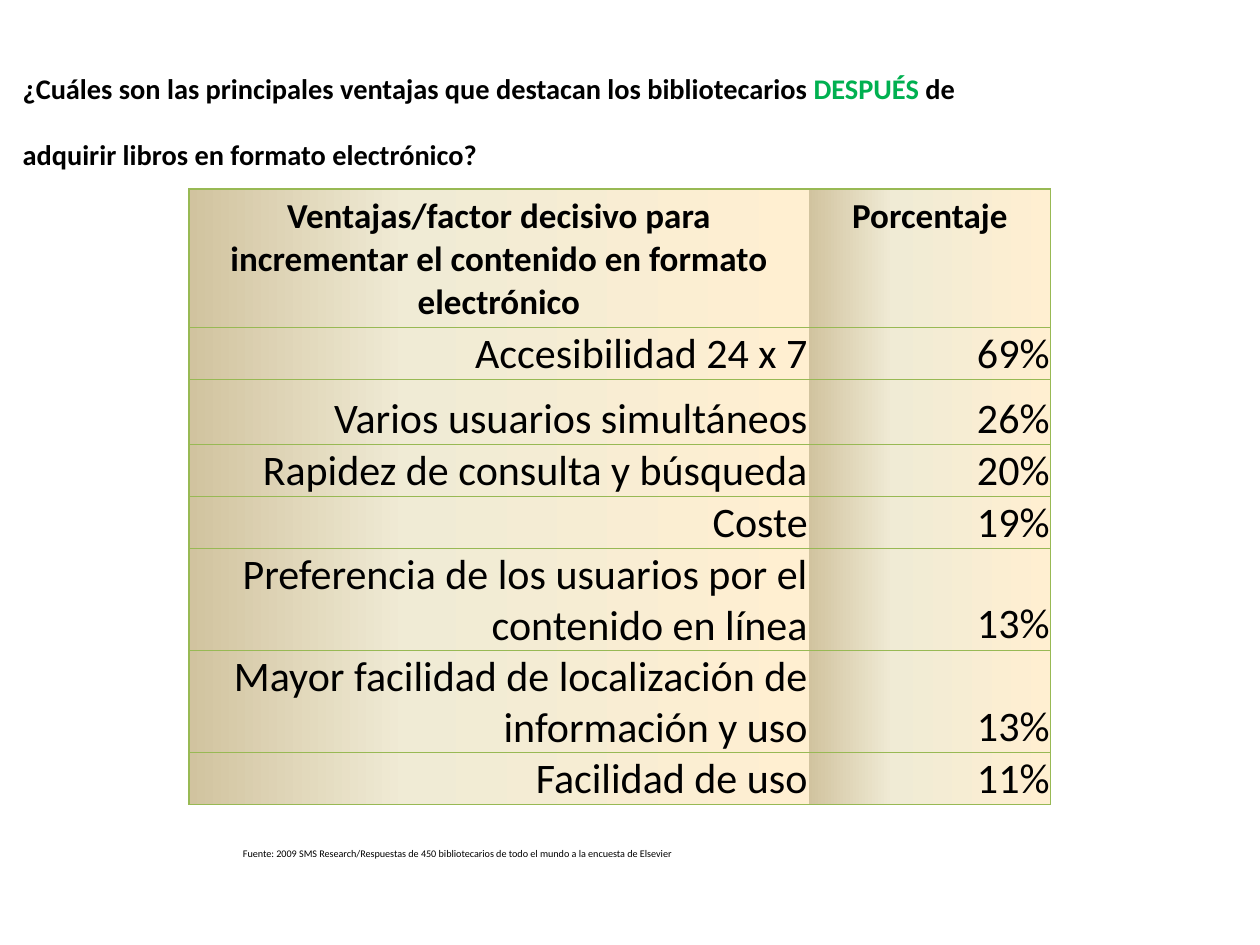
"""Build a slide with a table of the advantages of electronic books named by librarians."""
from pptx import Presentation
from pptx.dml.color import RGBColor
from pptx.enum.text import MSO_ANCHOR, MSO_AUTO_SIZE, PP_ALIGN
from pptx.oxml import parse_xml
from pptx.oxml.ns import nsdecls
from pptx.util import Inches, Pt

COLORS = {"text": "000000", "accent": "00B050", "border": "98B954",
          "light": "FFEFD1", "mid": "F0EBD5", "dark": "D1C39F"}
STOPS = [(0, "light"), (65, "mid"), (100, "dark")]
ROWS = [
    ("Ventajas/factor decisivo para incrementar el contenido en formato electrónico", "Porcentaje", 0.57),
    ("Accesibilidad 24 x 7", "69%", 0.4),
    ("Varios usuarios simultáneos", "26%", 0.52),
    ("Rapidez de consulta y búsqueda", "20%", 0.4),
    ("Coste", "19%", 0.4),
    ("Preferencia de los usuarios por el contenido en línea", "13%", 0.4),
    ("Mayor facilidad de localización de información y uso", "13%", 0.4),
    ("Facilidad de uso", "11%", 0.4),
]
TITLE = [
    ("¿Cuáles son las principales ventajas que destacan los bibliotecarios ", "text"),
    ("DESPUÉS", "accent"),
    (" de adquirir libros en formato electrónico?", "text"),
]


def add_run(p, text, size, color="text", bold=False, baseline=None):
    r = p.add_run()
    r.text = text
    r.font.name = "Calibri"
    r.font.size = Pt(size)
    r.font.bold = bold
    r.font.color.rgb = RGBColor.from_string(COLORS[color])
    if baseline:
        r.font._element.set("baseline", str(baseline))


def style_cell(cell, open_side):
    tc_pr = cell._tc.get_or_add_tcPr()
    for side in "LRTB":
        paint = "<a:noFill/>" if side == open_side else (
            f'<a:solidFill><a:srgbClr val="{COLORS["border"]}"/></a:solidFill>')
        tc_pr.append(parse_xml(f'<a:ln{side} {nsdecls("a")} w="9525">{paint}</a:ln{side}>'))
    stops = "".join(f'<a:gs pos="{pos * 1000}"><a:srgbClr val="{COLORS[name]}"/></a:gs>'
                    for pos, name in STOPS)
    tc_pr.append(parse_xml(f'<a:gradFill {nsdecls("a")}><a:gsLst>{stops}</a:gsLst>'
                           '<a:lin ang="10800000" scaled="0"/></a:gradFill>'))


prs = Presentation()
prs.slide_width, prs.slide_height = Inches(10), Inches(7.5)
slide = prs.slides.add_slide(prs.slide_layouts[5])

s = slide.shapes.add_table(len(ROWS), 2, Inches(1.5), Inches(1.5), Inches(6.83), Inches(4.89))
table = s.table
table.first_row = False
table.horz_banding = False
for col, width in zip(table.columns, (4.92, 1.92)):
    col.width = Inches(width)
for i, (*texts, height) in enumerate(ROWS):
    table.rows[i].height = Inches(height)
    for j, text in enumerate(texts):
        cell = table.cell(i, j)
        p = cell.text_frame.paragraphs[0]
        if i == 0:
            p.alignment = PP_ALIGN.CENTER
            add_run(p, text, 20, bold=True)
        else:
            p.alignment = PP_ALIGN.RIGHT
            add_run(p, text, 24)
            cell.vertical_anchor = MSO_ANCHOR.BOTTOM
            cell.margin_left = cell.margin_right = cell.margin_top = Inches(0.01)
            cell.margin_bottom = 0
        style_cell(cell, "RL"[j])
s.height = Inches(4.89)

source = slide.shapes.add_textbox(Inches(1.83), Inches(6.58), Inches(6.17), Inches(0.27))
tf = source.text_frame
tf.word_wrap = True
tf.auto_size = MSO_AUTO_SIZE.SHAPE_TO_FIT_TEXT
add_run(tf.paragraphs[0], "Fuente: 2009 SMS Research/Respuestas de 450 bibliotecarios de todo el mundo "
        "a la encuesta de Elsevier", 10, baseline=-25000)

title = slide.shapes.title
title.left, title.top, title.width, title.height = (Inches(v) for v in (0.08, 0.25, 8.08, 1.09))
tf = title.text_frame
tf.word_wrap = True
tf.auto_size = MSO_AUTO_SIZE.SHAPE_TO_FIT_TEXT
tf.vertical_anchor = MSO_ANCHOR.TOP
p = tf.paragraphs[0]
p.alignment = PP_ALIGN.LEFT
for text, color in TITLE:
    add_run(p, text, 28, color, bold=True, baseline=-25000)

prs.save("out.pptx")
